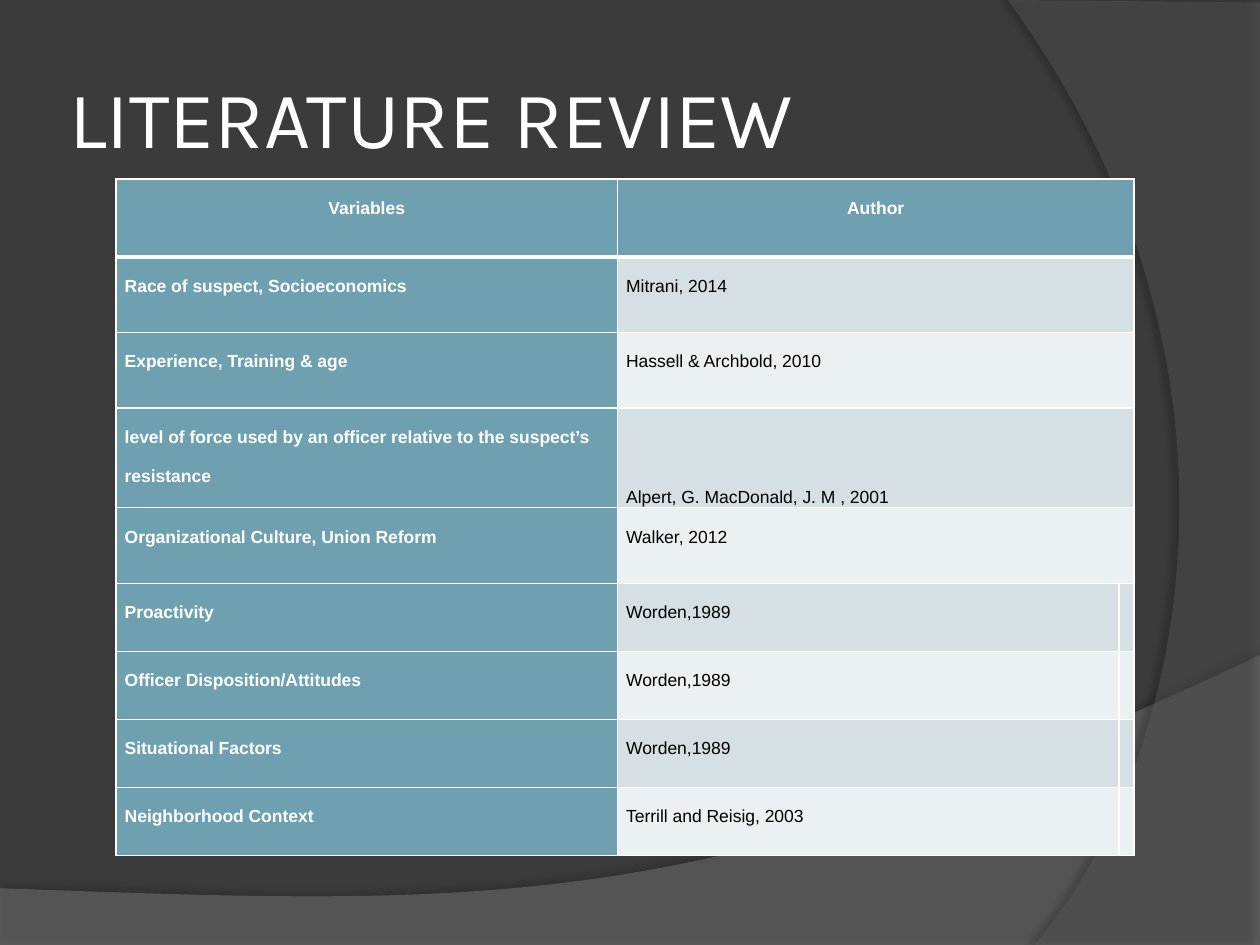
"""Build the literature review slide: a table of variables and authors."""
import dataclasses

import lxml.etree
import pptx
import pptx.dml.color
import pptx.enum.text
import pptx.oxml.ns
import pptx.util

Inches, Pt = pptx.util.Inches, pptx.util.Pt
RGB = pptx.dml.color.RGBColor.from_string
qn = pptx.oxml.ns.qn
ALIGN, ANCHOR = pptx.enum.text.PP_ALIGN, pptx.enum.text.MSO_ANCHOR


@dataclasses.dataclass(frozen=True)
class Theme:
    background: str = "3B3B3B"
    light: str = "FFFFFF"
    dark: str = "000000"
    accent: str = "6EA0B0"
    bands: tuple = ("D5DFE4", "EBF0F2")
    title_font: str = "Karla"
    table_font: str = "Arial"
    title_size: int = 46
    table_size: int = 10


THEME = Theme()
TITLE = "LITERATURE REVIEW"
REVIEW = [
    ("Variables", "Author"),
    ("Race of suspect, Socioeconomics", "Mitrani, 2014"),
    ("Experience, Training & age", "Hassell & Archbold, 2010"),
    ("level of force used by an officer relative to the suspect’s resistance",
     "Alpert, G. MacDonald, J. M , 2001"),
    ("Organizational Culture, Union Reform", "Walker, 2012"),
    ("Proactivity", "Worden,1989"),
    ("Officer Disposition/Attitudes", "Worden,1989"),
    ("Situational Factors", "Worden,1989"),
    ("Neighborhood Context", "Terrill and Reisig, 2003"),
]
COLUMN_WIDTHS = [3.98, 3.98, 0.12]
ROW_HEIGHTS = [0.62, 0.6, 0.6, 0.79, 0.6] + [0.54] * 4
FULL_WIDTH_ROWS = 5
BOTTOM_ANCHORED_ROW = 3

SWOOSHES = [
    {"curve": [(10, 5.2), (5.59, 7.29), (3.91, 7.19), (0, 7.05)],
     "corners": [(0, 7.5), (10, 7.5)],
     "fill": "7F7F7F", "opacity": 45,
     "shadow": {"opacity": 35, "blur": 4, "distance": 3.5, "angle": 270}},
    {"curve": [(8.21, 7.5), (9.35, 6.19), (10.18, 3), (8, 0)],
     "corners": [(10, 0.02), (10, 7.5)],
     "fill": "5E5E5E", "opacity": 40,
     "shadow": {"opacity": 45, "blur": 4, "distance": 4, "angle": 180}},
]


def bezier(points, steps=60):
    a, b, c, d = points
    for step in range(steps + 1):
        t = step / steps
        weights = ((1 - t) ** 3, 3 * t * (1 - t) ** 2, 3 * t * t * (1 - t), t ** 3)
        yield tuple(sum(w * p[axis] for w, p in zip(weights, (a, b, c, d)))
                    for axis in (0, 1))


def add_child(parent, tag, **attributes):
    values = {name: str(value) for name, value in attributes.items()}
    return lxml.etree.SubElement(parent, qn(tag), values)


def add_swoosh(slide, swoosh):
    outline = [(Inches(x), Inches(y))
               for x, y in [*bezier(swoosh["curve"]), *swoosh["corners"]]]
    builder = slide.shapes.build_freeform(*outline[0])
    builder.add_line_segments(outline[1:], close=True)
    shape = builder.convert_to_shape()
    shape.fill.solid()
    shape.fill.fore_color.rgb = RGB(swoosh["fill"])
    shape.line.fill.background()
    shape.shadow.inherit = False
    properties = shape.element.spPr
    add_child(properties.find(qn("a:solidFill")).find(qn("a:srgbClr")),
              "a:alpha", val=swoosh["opacity"] * 1000)
    shadow = swoosh["shadow"]
    outer = add_child(properties.find(qn("a:effectLst")), "a:outerShdw",
                      blurRad=Pt(shadow["blur"]), dist=Pt(shadow["distance"]),
                      dir=shadow["angle"] * 60000, algn="ctr", rotWithShape=0)
    color = add_child(outer, "a:srgbClr", val=THEME.dark)
    add_child(color, "a:alpha", val=shadow["opacity"] * 1000)
    slide.shapes.title.element.addprevious(shape.element)


def write(paragraph, text, font, size, color, bold=False):
    run = paragraph.add_run()
    run.text = text
    run.font.name, run.font.size, run.font.bold = font, Pt(size), bold
    run.font.color.rgb = RGB(color)


def add_title(slide):
    title = slide.shapes.title
    title.left, title.top = Inches(0.5), Inches(0.3)
    title.width, title.height = Inches(8.17), Inches(1.25)
    frame = title.text_frame
    frame.margin_left = frame.margin_right = Inches(0.05)
    frame.margin_top = frame.margin_bottom = Inches(0.05)
    frame.vertical_anchor = ANCHOR.MIDDLE
    frame.auto_size = pptx.enum.text.MSO_AUTO_SIZE.NONE
    frame.paragraphs[0].alignment = ALIGN.LEFT
    write(frame.paragraphs[0], TITLE, THEME.title_font, THEME.title_size, THEME.light)


def style_cell(cell, row, column):
    properties = cell._tc.get_or_add_tcPr()
    widths = {"a:lnL": 1, "a:lnR": 1, "a:lnT": 3 if row == 1 else 1,
              "a:lnB": 3 if row == 0 else 1}
    for side, width in widths.items():
        border = add_child(properties, side, w=Pt(width))
        add_child(add_child(border, "a:solidFill"), "a:srgbClr", val=THEME.light)
    cell.margin_left = cell.margin_right = Inches(0.07 if column < 2 else 0)
    cell.margin_top = cell.margin_bottom = 0
    cell.fill.solid()
    highlighted = row == 0 or column == 0
    cell.fill.fore_color.rgb = RGB(THEME.accent if highlighted else THEME.bands[(row - 1) % 2])


def fill_cell(cell, text, row, column):
    highlighted = row == 0 or column == 0
    paragraph = cell.text_frame.paragraphs[0]
    paragraph.alignment = ALIGN.CENTER if row == 0 else ALIGN.LEFT
    paragraph.line_spacing = 2.0
    paragraph.space_before = paragraph.space_after = Pt(12)
    bottom = row == BOTTOM_ANCHORED_ROW and column == 1
    cell.vertical_anchor = ANCHOR.BOTTOM if bottom else ANCHOR.TOP
    write(paragraph, text, THEME.table_font, THEME.table_size,
          THEME.light if highlighted else THEME.dark, highlighted)


def add_review(slide):
    table = slide.shapes.add_table(
        len(REVIEW), len(COLUMN_WIDTHS), Inches(0.92), Inches(1.42),
        Inches(sum(COLUMN_WIDTHS)), Inches(sum(ROW_HEIGHTS))).table
    table.horz_banding = False
    for column, width in zip(table.columns, COLUMN_WIDTHS):
        column.width = Inches(width)
    for row, (texts, height) in enumerate(zip(REVIEW, ROW_HEIGHTS)):
        table.rows[row].height = Inches(height)
        for column in range(len(COLUMN_WIDTHS)):
            style_cell(table.cell(row, column), row, column)
        for column, text in enumerate(texts):
            fill_cell(table.cell(row, column), text, row, column)
        if row < FULL_WIDTH_ROWS:
            table.cell(row, 1).merge(table.cell(row, 2))


def main():
    deck = pptx.Presentation()
    deck.slide_width, deck.slide_height = Inches(10), Inches(7.5)
    slide = deck.slides.add_slide(deck.slide_layouts.get_by_name("Title Only"))
    slide.background.fill.solid()
    slide.background.fill.fore_color.rgb = RGB(THEME.background)
    for swoosh in SWOOSHES:
        add_swoosh(slide, swoosh)
    add_title(slide)
    add_review(slide)
    deck.save("out.pptx")


if __name__ == "__main__":
    main()
